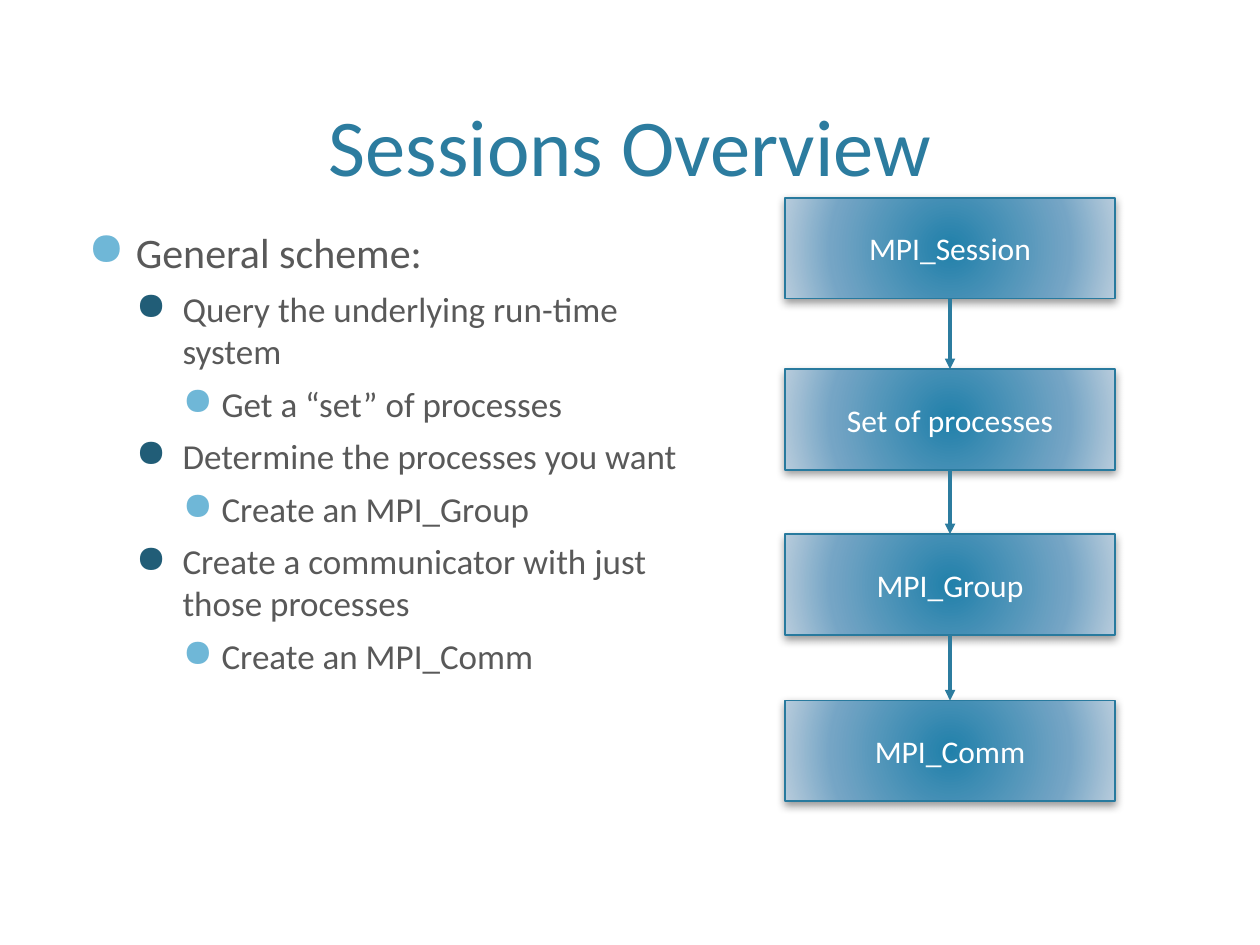
"""Build the Sessions Overview slide with its bullet list and process chain."""
import pptx
import pptx.dml.color
import pptx.enum.shapes
import pptx.enum.text
import pptx.oxml
import pptx.oxml.ns
import pptx.util

Inches, Pt = pptx.util.Inches, pptx.util.Pt
ALIGN, ANCHOR = pptx.enum.text.PP_ALIGN, pptx.enum.text.MSO_ANCHOR
NAMESPACE = pptx.oxml.ns.nsdecls("a")


def color(value):
    return pptx.dml.color.RGBColor.from_string(value)


def write(para, text, size, ink):
    span = para.add_run()
    span.text = text
    for name, value in {"name": "Calibri", "size": Pt(size)}.items():
        setattr(span.font, name, value)
    span.font.color.rgb = color(ink)


deck = pptx.Presentation()
deck.slide_width, deck.slide_height = Inches(10), Inches(7.5)
page = deck.slides.add_slide(deck.slide_layouts[6])

title = page.shapes.add_textbox(Inches(0.6), Inches(0.12), Inches(8.8), Inches(1.46)).text_frame
for name, value in {"word_wrap": True, "vertical_anchor": ANCHOR.BOTTOM}.items():
    setattr(title, name, value)
title.paragraphs[0].alignment = ALIGN.CENTER
write(title.paragraphs[0], "Sessions Overview", 46, "2C7C9F")

levels = [
    {"margin": 0.38, "hang": 0.38, "before": 16, "size": 24, "bullet": "6FB7D7"},
    {"margin": 0.75, "hang": 0.37, "before": 6, "size": 20, "bullet": "215D77"},
    {"margin": 1.06, "hang": 0.31, "before": 6, "size": 20, "bullet": "6FB7D7"},
]
points = [
    (0, "General scheme:"),
    (1, "Query the underlying run-time system"),
    (2, "Get a “set” of processes"),
    (1, "Determine the processes you want"),
    (2, "Create an MPI_Group"),
    (1, "Create a communicator with just those processes"),
    (2, "Create an MPI_Comm"),
]
body = page.shapes.add_textbox(Inches(0.6), Inches(1.75), Inches(5.12), Inches(4.75)).text_frame
body.word_wrap = True
for index, (level, text) in enumerate(points):
    look = levels[level]
    para = body.add_paragraph() if index else body.paragraphs[0]
    for name, value in {"level": level, "space_before": Pt(look["before"])}.items():
        setattr(para, name, value)
    write(para, text, look["size"], "595959")
    properties = para._p.get_or_add_pPr()
    properties.set("marL", str(Inches(look["margin"])))
    properties.set("indent", str(-Inches(look["hang"])))
    for bullet in (
        f'<a:buClr {NAMESPACE}><a:srgbClr val="{look["bullet"]}"/></a:buClr>',
        f'<a:buSzPct {NAMESPACE} val="110000"/>',
        f'<a:buChar {NAMESPACE} char="●"/>',
    ):
        properties.append(pptx.oxml.parse_xml(bullet))

gradient_stops = "".join(
    f'<a:gs pos="{percent * 1000}"><a:srgbClr val="{shade}"/></a:gs>'
    for percent, shade in [(0, "2180AA"), (69, "75A5C5"), (100, "B8CCDC")]
)
gradient = (
    f'<a:gradFill {NAMESPACE} rotWithShape="1"><a:gsLst>{gradient_stops}</a:gsLst>'
    '<a:path path="circle"><a:fillToRect l="50000" t="50000" r="50000" b="50000"/></a:path>'
    "</a:gradFill>"
)
shadow = (
    f'<a:effectLst {NAMESPACE}><a:outerShdw blurRad="{Pt(5)}" dist="{Pt(2)}" dir="5400000" '
    'rotWithShape="0"><a:srgbClr val="000000"><a:alpha val="40000"/></a:srgbClr>'
    "</a:outerShdw></a:effectLst>"
)
steps = [(1.57, "MPI_Session"), (2.93, "Set of processes"), (4.24, "MPI_Group"), (5.56, "MPI_Comm")]
boxes = []
for top, text in steps:
    box = page.shapes.add_shape(
        pptx.enum.shapes.MSO_SHAPE.RECTANGLE, Inches(6.23), Inches(top), Inches(2.62), Inches(0.8)
    )
    box.line.color.rgb = color("287A9E")
    box.line.width = Pt(1)
    box._element.spPr.insert(2, pptx.oxml.parse_xml(gradient))
    box._element.spPr.append(pptx.oxml.parse_xml(shadow))
    box.text_frame.vertical_anchor = ANCHOR.MIDDLE
    box.text_frame.paragraphs[0].alignment = ALIGN.CENTER
    write(box.text_frame.paragraphs[0], text, 18, "FFFFFF")
    boxes.append(box)

for upper, lower in zip(boxes, boxes[1:]):
    arrow = page.shapes.add_connector(pptx.enum.shapes.MSO_CONNECTOR.STRAIGHT, 0, 0, 0, 0)
    arrow.begin_connect(upper, 2)
    arrow.end_connect(lower, 0)
    arrow.line.color.rgb = color("2C7C9F")
    arrow.line.width = Pt(2)
    arrow.line._get_or_add_ln().append(
        pptx.oxml.parse_xml(f'<a:tailEnd {NAMESPACE} type="triangle"/>')
    )
    arrow._element.spPr.append(pptx.oxml.parse_xml(f"<a:effectLst {NAMESPACE}/>"))

deck.save("out.pptx")
